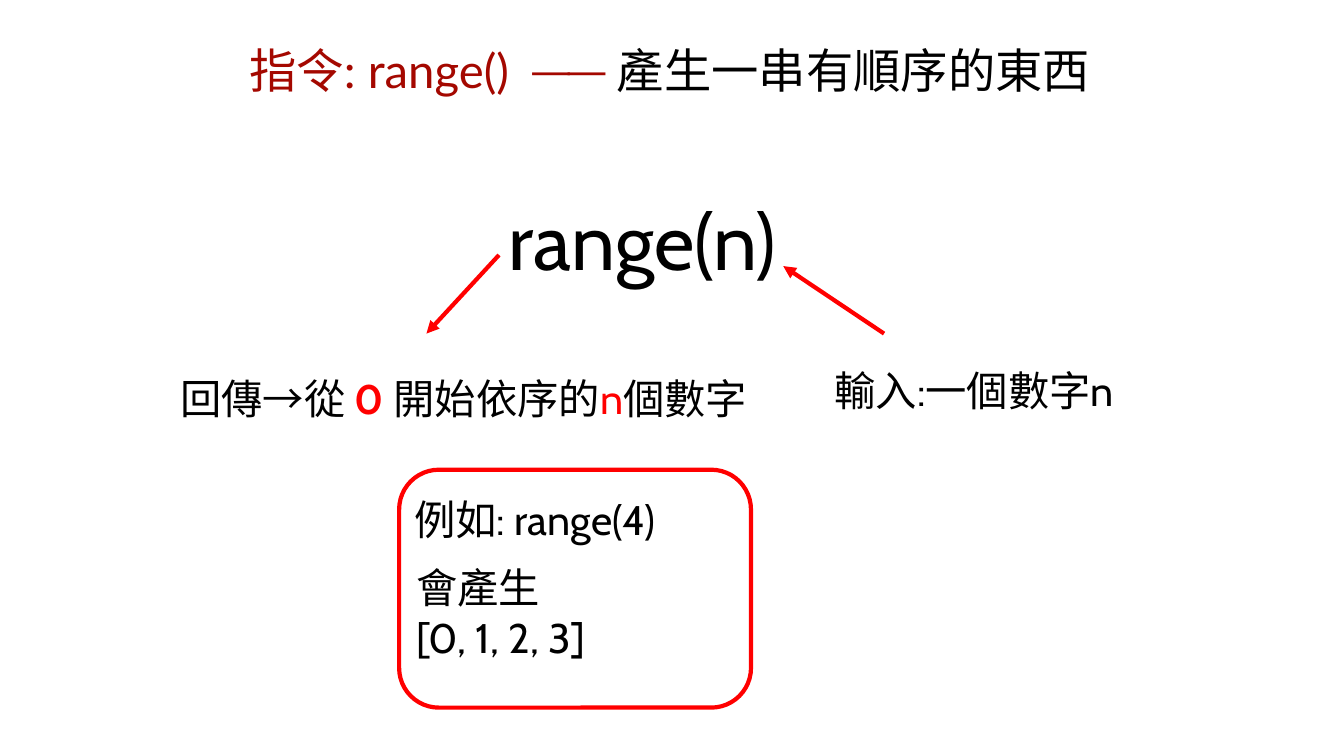
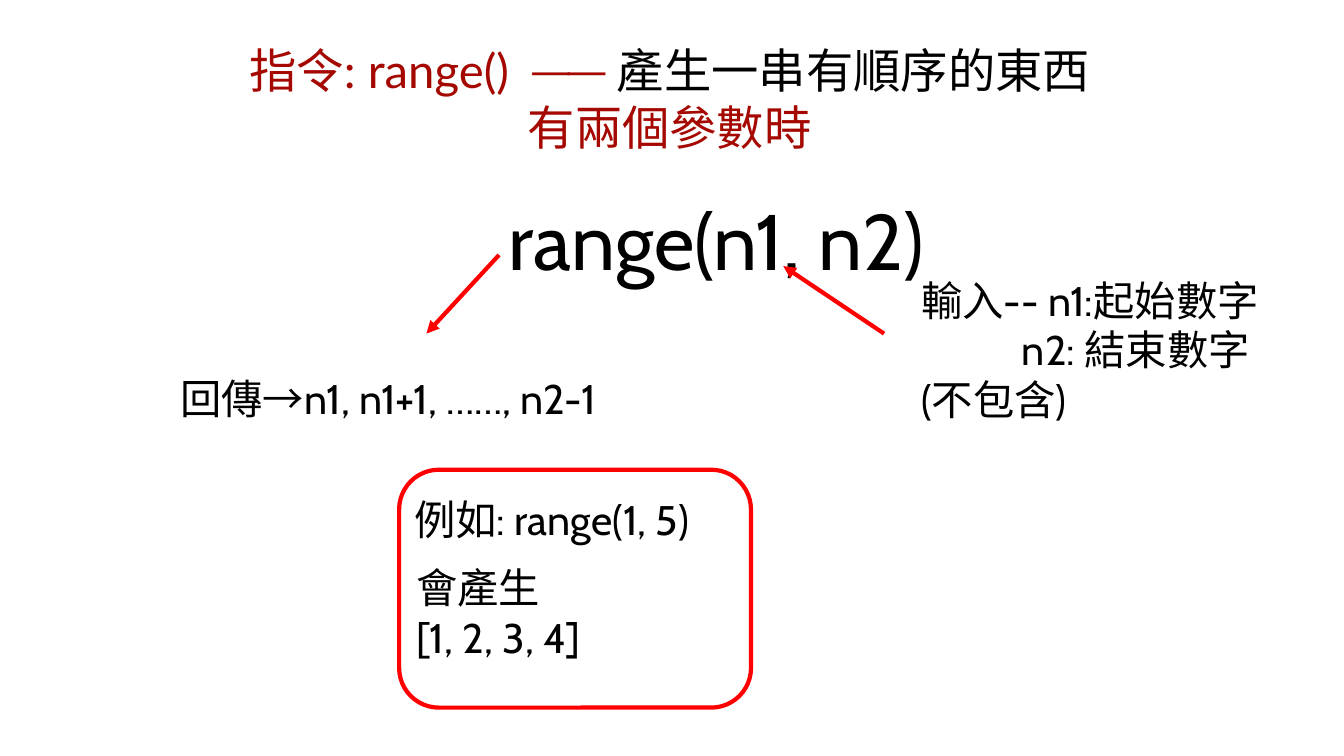
import pptx
import pptx.util
import pptx.dml.color
import pptx.enum.shapes
import pptx.enum.text
import pptx.oxml.ns
from lxml import etree

BLACK = pptx.dml.color.RGBColor(0, 0, 0)
RED = pptx.dml.color.RGBColor(0xFF, 0, 0)
DARK_RED = pptx.dml.color.RGBColor(0xA4, 0x08, 0)

TITLE_FONT, BODY_FONT = "Lato", "Cabin"
TITLE_SIZE, BODY_SIZE, CALL_SIZE = 33.8, 29.5, 56.2
LINE_WIDTH = 3

WIDTH, HEIGHT = pptx.util.Inches(13.33), pptx.util.Inches(7.5)

TITLE_LINE = [
    ("指令: range()  ── ", {"font": TITLE_FONT, "color": DARK_RED}),
    "產生一串有順序的東西",
]

# Each area is left, top, width, height in percent of the slide.
TITLE_AREA = (17.48, 5.47, 64.73, 15.2)
CALL_AREA = (37.13, 24.76, 37.95, 13.87)
EXAMPLE_AREA = (30.08, 64.67, 26.18, 8)
FRAME_AREA = (29.7, 62.13, 26.18, 31.47)
RESULT_AREA = (30.23, 73.73, 45.68, 14.53)
RETURN_AREA = (12.68, 48.67, 44.85, 8)
ARROWS = [
    ((37.13, 33.73), (31.73, 44.13)),
    ((65.78, 44.13), (58.28, 35.2)),
]

SLIDES = [
    {
        "title": [TITLE_LINE],
        "call": "range(n)",
        "example": "例如: range(4)",
        "result": "[0, 1, 2, 3]",
        "returns": [
            "回傳→從 ",
            ("0 ", {"color": RED, "bold": True}),
            "開始依序的",
            ("n", {"color": RED}),
            "個數字",
        ],
        "inputs": ["輸入:一個數字n"],
        "input_area": (61.35, 47.6, 24, 8),
        "indents": {},
    },
    {
        "title": [
            TITLE_LINE,
            [("有兩個參數時", {"font": TITLE_FONT, "color": DARK_RED})],
        ],
        "call": "range(n1, n2)",
        "example": "例如: range(1, 5)",
        "result": "[1, 2, 3, 4]",
        "returns": ["回傳→n1, n1+1, ……, n2-1"],
        "inputs": ["輸入-- n1:起始數字", "n2: 結束數字", "(不包含)"],
        "input_area": (67.8, 35.73, 27.75, 21.2),
        "indents": {1: 1},
    },
]


def place(*percents):
    sides = (WIDTH, HEIGHT) * (len(percents) // 2)
    return [round(side * percent / 100) for side, percent in zip(sides, percents)]


def add_text(slide, area, lines, size=BODY_SIZE, font=BODY_FONT, color=BLACK,
             align=None, wrap=True, margin=None, indents=None):
    frame = slide.shapes.add_textbox(*place(*area)).text_frame
    frame.word_wrap = wrap
    if margin is not None:
        frame.margin_left = frame.margin_right = margin
        frame.margin_top = frame.margin_bottom = margin
    for index, line in enumerate(lines):
        paragraph = frame.add_paragraph() if index else frame.paragraphs[0]
        paragraph.alignment = align
        if indents and index in indents:
            indent = pptx.util.Inches(indents[index])
            paragraph._p.get_or_add_pPr().set("indent", str(indent))
        for piece in [line] if isinstance(line, str) else line:
            text, style = (piece, {}) if isinstance(piece, str) else piece
            run = paragraph.add_run()
            run.text = text
            run.font.size = pptx.util.Pt(size)
            run.font.bold = style.get("bold", False)
            run.font.color.rgb = style.get("color", color)
            run.font.name = style.get("font", font)
            east_asian = etree.SubElement(run.font._element, pptx.oxml.ns.qn("a:ea"))
            east_asian.set("typeface", run.font.name)


def style_line(line):
    line.color.rgb = RED
    line.width = pptx.util.Pt(LINE_WIDTH)


def add_frame(slide):
    frame = slide.shapes.add_shape(
        pptx.enum.shapes.MSO_SHAPE.ROUNDED_RECTANGLE, *place(*FRAME_AREA))
    frame.shadow.inherit = False
    frame.fill.background()
    style_line(frame.line)


def add_arrow(slide, start, end):
    arrow = slide.shapes.add_connector(
        pptx.enum.shapes.MSO_CONNECTOR.STRAIGHT, *place(*start, *end))
    style_line(arrow.line)
    properties = arrow._element.spPr
    line = properties.find(pptx.oxml.ns.qn("a:ln"))
    etree.SubElement(line, pptx.oxml.ns.qn("a:tailEnd")).set("type", "triangle")
    etree.SubElement(properties, pptx.oxml.ns.qn("a:effectLst"))


def add_range_slide(presentation, content):
    slide = presentation.slides.add_slide(presentation.slide_layouts[6])
    add_text(slide, TITLE_AREA, content["title"], size=TITLE_SIZE, wrap=False,
             margin=0, align=pptx.enum.text.PP_ALIGN.CENTER)
    add_text(slide, CALL_AREA, [content["call"]], size=CALL_SIZE)
    add_text(slide, EXAMPLE_AREA, [content["example"]])
    add_frame(slide)
    add_text(slide, RESULT_AREA, ["會產生", content["result"]])
    add_text(slide, RETURN_AREA, [content["returns"]])
    for start, end in ARROWS:
        add_arrow(slide, start, end)
    add_text(slide, content["input_area"], content["inputs"], indents=content["indents"])


def main():
    presentation = pptx.Presentation()
    presentation.slide_width, presentation.slide_height = WIDTH, HEIGHT
    for content in SLIDES:
        add_range_slide(presentation, content)
    presentation.save("out.pptx")


if __name__ == "__main__":
    main()
